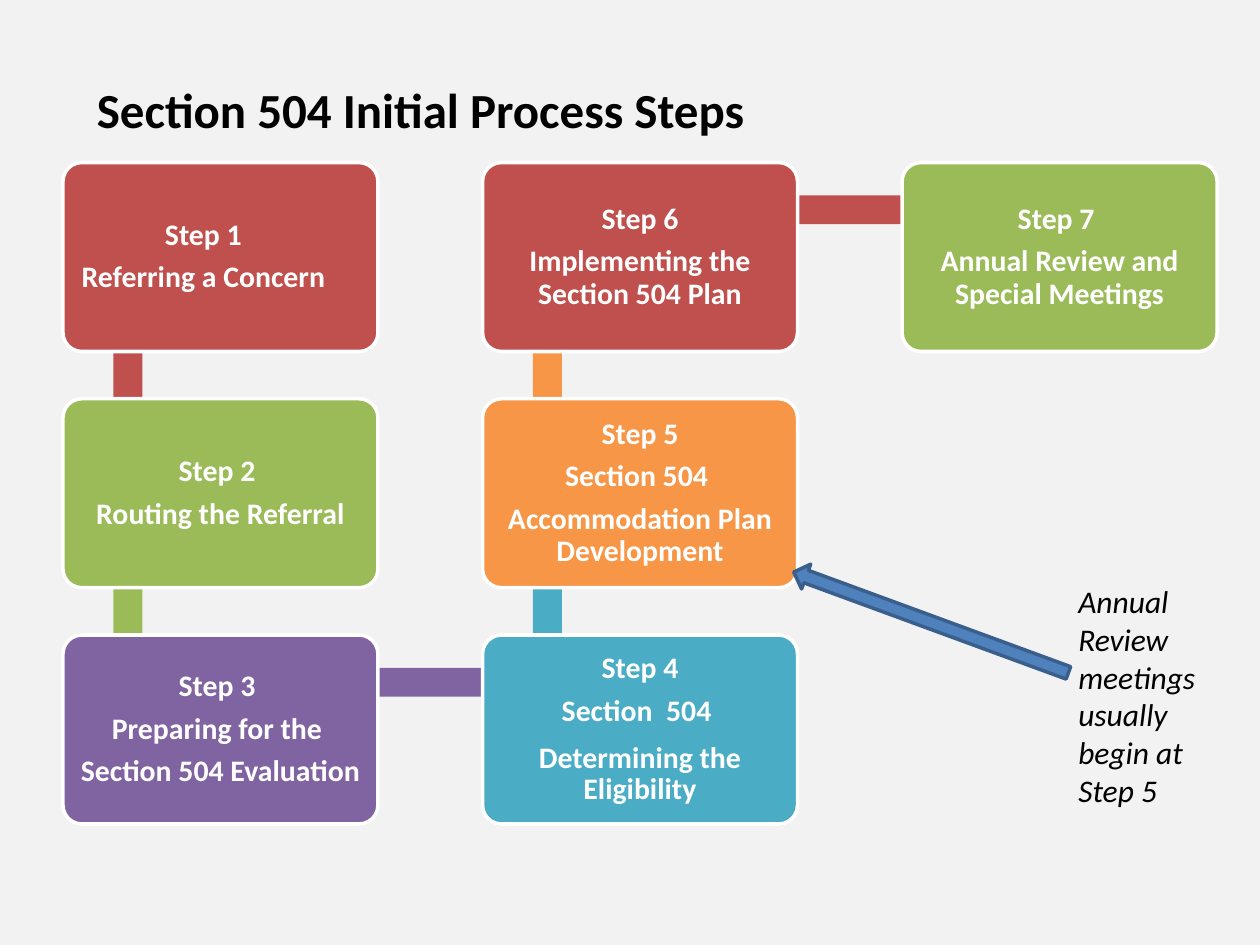
from math import atan2, degrees, hypot

from pptx import Presentation
from pptx.dml.color import RGBColor
from pptx.enum.shapes import MSO_SHAPE
from pptx.enum.text import MSO_ANCHOR, MSO_AUTO_SIZE, PP_ALIGN
from pptx.util import Inches, Pt

RECT = MSO_SHAPE.RECTANGLE
ROUND = MSO_SHAPE.ROUNDED_RECTANGLE
ARROW = MSO_SHAPE.UP_ARROW
MIDDLE = MSO_ANCHOR.MIDDLE
CENTER = PP_ALIGN.CENTER
GROW = MSO_AUTO_SIZE.SHAPE_TO_FIT_TEXT

RED, GREEN, PURPLE = "C0504D", "9BBB59", "8064A2"
TEAL, ORANGE, WHITE = "4BACC6", "F79646", "FFFFFF"

BOX_W, BOX_H = 2.5, 1.5
STEP_X, STEP_Y = 3.33, 1.875
BAR = 0.23
JOINT_X, JOINT_Y = 0.515, 0.375

# column, row, colour, lines of text
STEPS = [
    (0, 0, RED, ["Step 1", "Referring a Concern"]),
    (0, 1, GREEN, ["Step 2 ", "Routing the Referral"]),
    (0, 2, PURPLE, ["Step 3 ", "Preparing for the ", "Section 504 Evaluation"]),
    (1, 2, TEAL, ["Step 4", "Section  504 ", "Determining the", "Eligibility"]),
    (1, 1, ORANGE, ["Step 5", "Section 504 ", "Accommodation Plan Development"]),
    (1, 0, RED, ["Step 6", "Implementing the Section 504 Plan"]),
    (2, 0, GREEN, ["Step 7 ", "Annual Review and Special Meetings"]),
]
TIGHT = "Determining the"
SHIFTED = "Step 1"


def color(code):
    return RGBColor.from_string(code)


def add_run(para, text, size, code, bold=False, italic=False):
    run = para.add_run()
    run.text = text
    font = run.font
    font.name, font.size = "Calibri", Pt(size)
    font.bold, font.italic = bold, italic
    font.color.rgb = color(code)


def add_block(slide, kind, box, fill, line=None):
    shape = slide.shapes.add_shape(kind, *map(Inches, box))
    shape.shadow.inherit = False
    shape.fill.solid()
    shape.fill.fore_color.rgb = color(fill)
    if line:
        shape.line.color.rgb = color(line)
        shape.line.width = Pt(2)
    else:
        shape.line.fill.background()
    return shape


def add_beam(slide, kind, start, end, width, fill, line=None):
    """Draw an upright shape turned so that its top points from start to end."""
    dx, dy = end[0] - start[0], end[1] - start[1]
    size = hypot(dx, dy)
    mid_x, mid_y = (start[0] + end[0]) / 2, (start[1] + end[1]) / 2
    box = (mid_x - width / 2, mid_y - size / 2, width, size)
    beam = add_block(slide, kind, box, fill, line)
    beam.rotation = degrees(atan2(dx, -dy)) % 360
    return beam


def add_step(slide, box, fill, lines):
    card = add_block(slide, ROUND, box, fill, WHITE)
    card.adjustments[0] = 0.1
    frame = card.text_frame
    frame.word_wrap = True
    frame.vertical_anchor = MIDDLE
    frame.margin_left = frame.margin_right = Inches(0.07)
    frame.margin_top = frame.margin_bottom = Inches(0.07)
    for i, text in enumerate(lines):
        para = frame.add_paragraph() if i else frame.paragraphs[0]
        para.alignment = CENTER
        if text != TIGHT:
            para.line_spacing = 0.9
            para.space_after = Pt(6)
        if text == SHIFTED:
            para._p.get_or_add_pPr().set("marR", str(Inches(0.27)))
        add_run(para, text, 17, WHITE, bold=True)


def add_flow(slide, left, top):
    """Place the snaking steps, each bar behind the boxes that it joins."""
    spots = [(left + col * STEP_X, top + row * STEP_Y) for col, row, _, _ in STEPS]
    joints = [(x + JOINT_X, y + JOINT_Y) for x, y in spots]
    for start, end, step in zip(joints, joints[1:], STEPS):
        add_beam(slide, RECT, start, end, BAR, step[2])
    for (x, y), (_, _, fill, lines) in zip(spots, STEPS):
        add_step(slide, (x, y, BOX_W, BOX_H), fill, lines)


def add_label(slide, box, text, size, wrap=True, **style):
    frame = slide.shapes.add_textbox(*map(Inches, box)).text_frame
    frame.word_wrap = wrap
    frame.auto_size = GROW
    add_run(frame.paragraphs[0], text, size, "000000", **style)


def add_note(slide, box):
    add_label(slide, box, "Annual Review meetings usually  begin at Step 5", 18,
              italic=True)
    add_beam(slide, ARROW, (8.48, 5.34), (6.3, 4.54), 0.21, "4F81BD", "3A5F8C")


def main():
    deck = Presentation()
    deck.slide_width, deck.slide_height = Inches(10), Inches(7.5)
    slide = deck.slides.add_slide(deck.slide_layouts[6])
    slide.background.fill.solid()
    slide.background.fill.fore_color.rgb = color("F2F2F2")
    add_flow(slide, 0.5, 1.29)
    add_label(slide, (0.67, 0.58, 5.41, 0.57), "Section 504 Initial Process Steps",
              28, wrap=False, bold=True)
    add_note(slide, (8.46, 4.57, 1.13, 1.92))
    deck.save("out.pptx")


if __name__ == "__main__":
    main()
